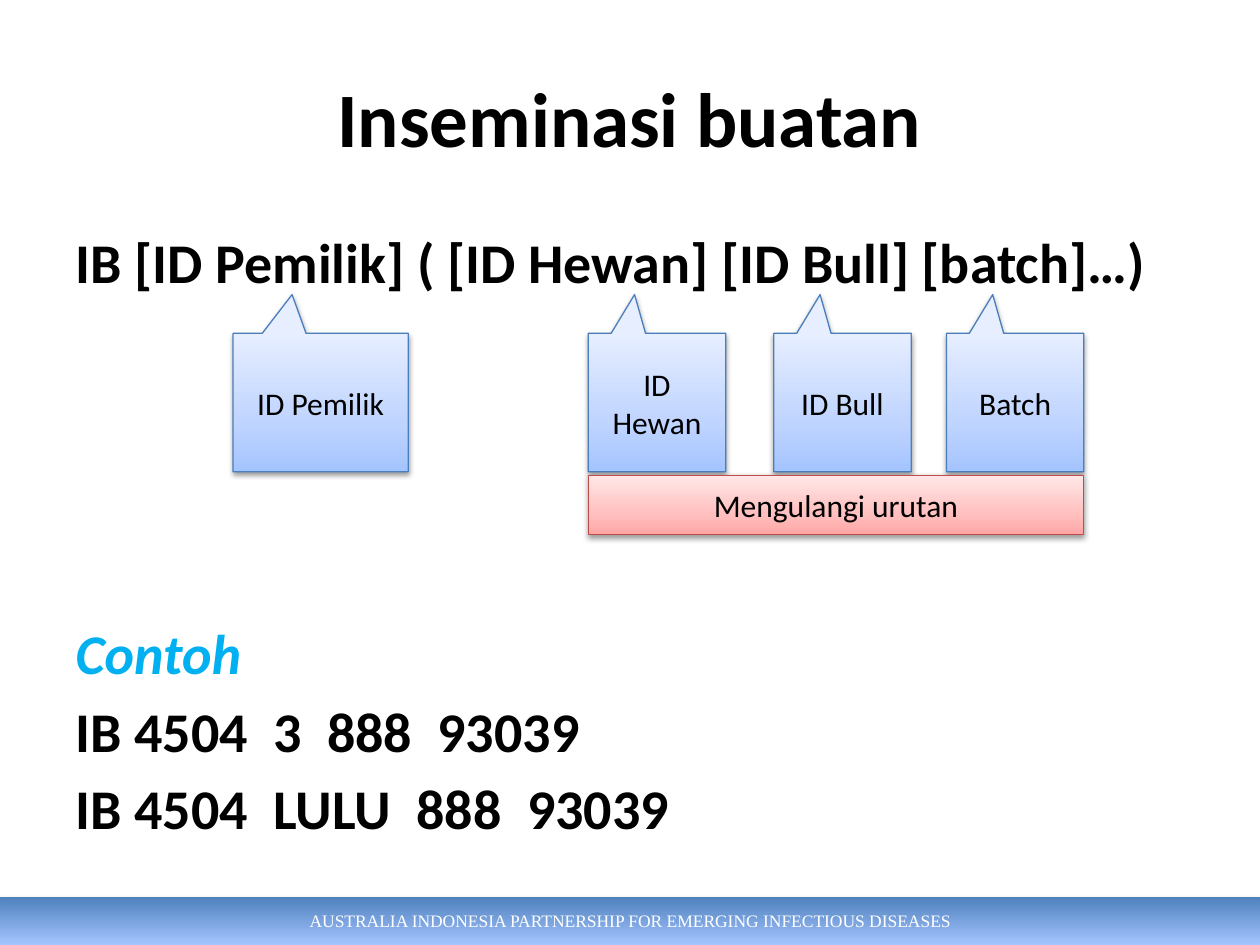
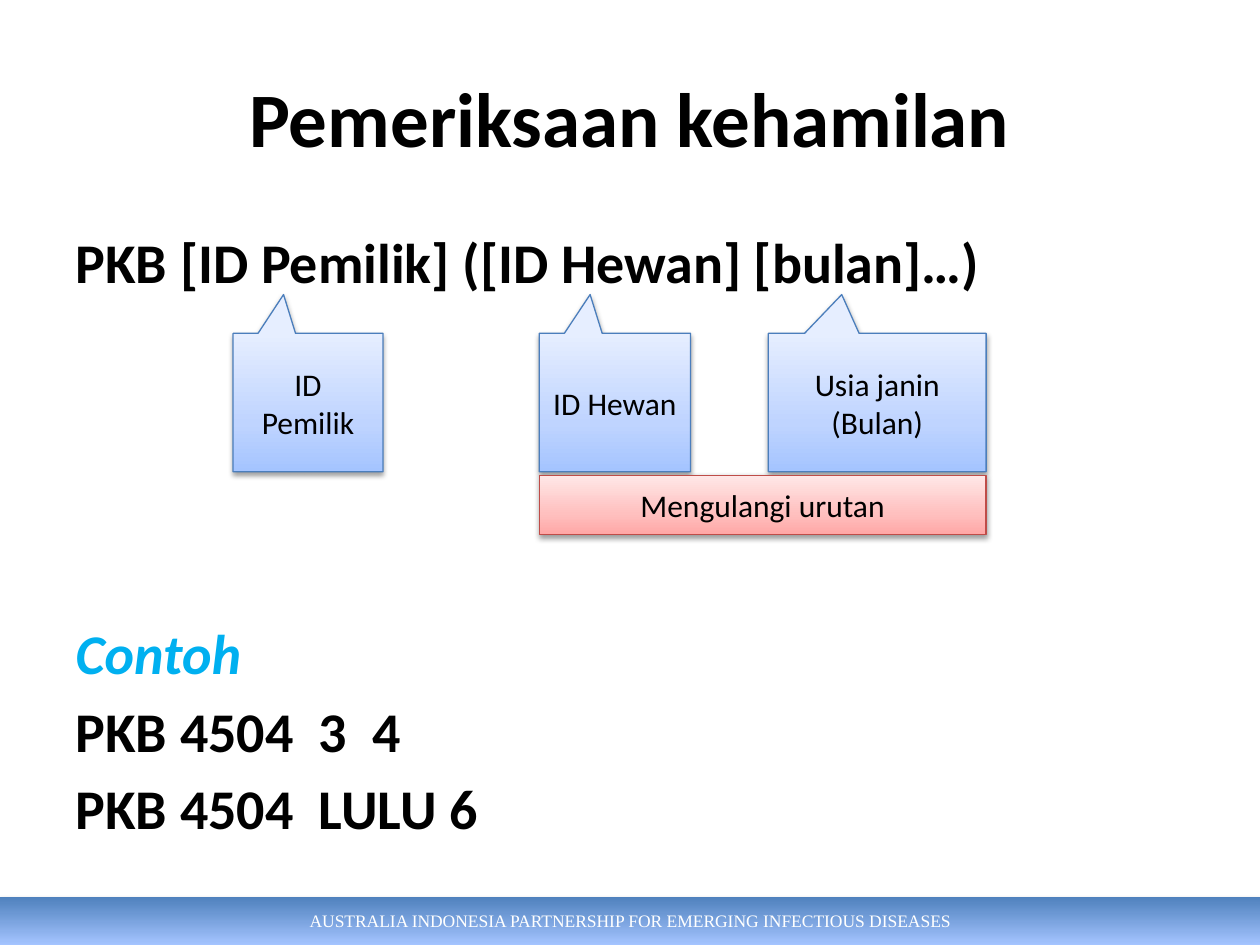
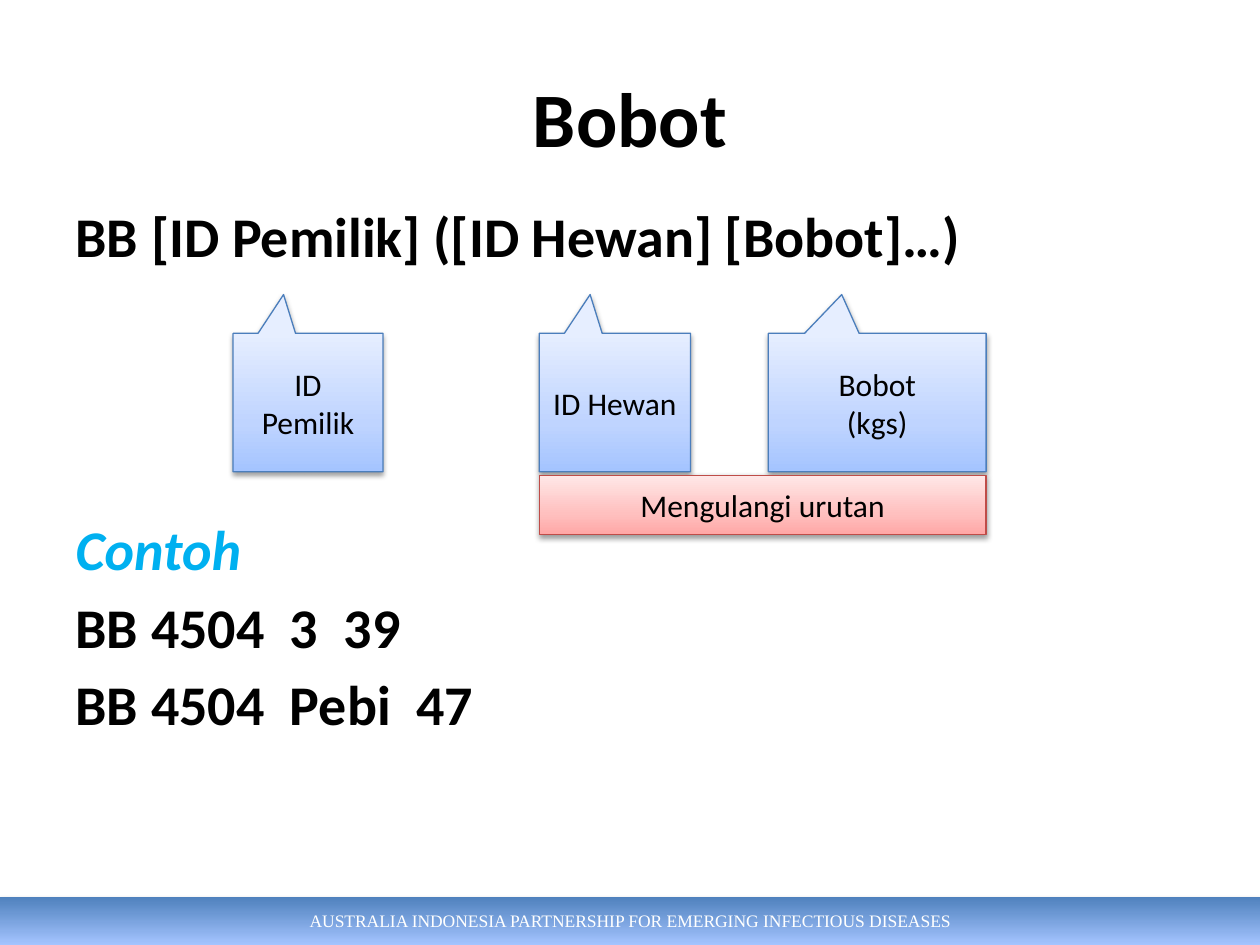
import pptx
import pptx.dml.color
import pptx.enum.shapes
import pptx.enum.text
import pptx.oxml.ns
import pptx.oxml.xmlchemy
import pptx.util
from lxml import etree

Cm = pptx.util.Cm
Pt = pptx.util.Pt
RGBColor = pptx.dml.color.RGBColor
Shape = pptx.enum.shapes.MSO_SHAPE
Anchor = pptx.enum.text.MSO_ANCHOR
Align = pptx.enum.text.PP_ALIGN
qn = pptx.oxml.ns.qn

# Shared colours
BLACK = RGBColor(0x00, 0x00, 0x00)
WHITE = RGBColor(0xFF, 0xFF, 0xFF)
CYAN = RGBColor(0x00, 0xB0, 0xF0)
BLUE_LINE = RGBColor(0x4B, 0x7E, 0xBC)
RED_LINE = RGBColor(0xBF, 0x4C, 0x48)

# Gradients from top to bottom: position in percent, colour
BLUE_FILL = [(0, RGBColor(0xE6, 0xEE, 0xFF)), (65, RGBColor(0xBF, 0xD4, 0xFF)),
             (100, RGBColor(0xA4, 0xC4, 0xFF))]
RED_FILL = [(0, RGBColor(0xFF, 0xE7, 0xE7)), (65, RGBColor(0xFF, 0xC0, 0xBF)),
            (100, RGBColor(0xFF, 0xA6, 0xA5))]
FOOTER_FILL = [(0, RGBColor(0x4F, 0x81, 0xBD)), (100, RGBColor(0xA4, 0xC4, 0xFF))]

# Shared measures, in centimetres
SLIDE_WIDTH, SLIDE_HEIGHT = 25.4, 19.05
MARGIN = 1.27
BODY_BOTTOM = 17.02
CALLOUT_TOP, CALLOUT_HEIGHT = 6.72, 2.79
BAND_TOP, BAND_HEIGHT = 9.58, 1.2
FOOTER_HEIGHT = 0.97
FOOTER = "AUSTRALIA INDONESIA PARTNERSHIP FOR EMERGING INFECTIOUS DISEASES"

# Each callout: left, width, lines; all but the first belong to the repeated part
OWNER_AND_ANIMAL = [(4.7, 3.02, ["ID Pemilik"]), (10.87, 3.05, ["ID Hewan"])]
COMMANDS = [
    dict(title="Inseminasi buatan", body_top=4.45, gap=185.5,
         syntax="IB [ID Pemilik] ( [ID Hewan] [ID Bull] [batch]…)",
         examples=["IB 4504  3  888  93039", "IB 4504  LULU  888  93039"],
         callouts=[(4.7, 3.53, ["ID Pemilik"]), (11.86, 2.77, ["ID Hewan"]),
                   (15.6, 2.77, ["ID Bull"]), (19.08, 2.77, ["Batch"])]),
    dict(title="Pemeriksaan kehamilan", body_top=4.45, gap=185.5,
         syntax="PKB [ID Pemilik] ([ID Hewan] [bulan]…)",
         examples=["PKB 4504  3  4", "PKB 4504  LULU 6"],
         callouts=OWNER_AND_ANIMAL + [(15.49, 4.39, ["Usia janin", "(Bulan)"])]),
    dict(title="Bobot", body_top=3.94, gap=140.5,
         syntax="BB [ID Pemilik] ([ID Hewan] [Bobot]…)",
         examples=["BB 4504  3  39", "BB 4504  Pebi  47"],
         callouts=OWNER_AND_ANIMAL + [(15.49, 4.39, ["Bobot", "(kgs)"])]),
]


def place(shape, left, top, width, height):
    shape.left, shape.top = Cm(left), Cm(top)
    shape.width, shape.height = Cm(width), Cm(height)


def add_span(para, text, size, color=BLACK, font="Calibri", bold=False, italic=False):
    span = para.add_run()
    span.text = text
    span.font.name = font
    span.font.size = Pt(size)
    span.font.color.rgb = color
    span.font.bold = bold
    span.font.italic = italic


def next_para(frame, index):
    return frame.add_paragraph() if index else frame.paragraphs[0]


def set_gradient(shape, stops):
    shape.fill.gradient()
    shape.fill.gradient_angle = 270
    stop_list = shape._element.spPr.find(".//" + qn("a:gsLst"))
    for stop in list(stop_list):
        stop_list.remove(stop)
    for position, color in stops:
        stop = etree.SubElement(stop_list, qn("a:gs"), pos=str(position * 1000))
        etree.SubElement(stop, qn("a:srgbClr"), val=str(color))


def set_shadow(shape, distance, opacity):
    shape.shadow.inherit = False
    effects = shape._element.spPr.find(qn("a:effectLst"))
    shadow = etree.SubElement(effects, qn("a:outerShdw"), blurRad=str(Pt(3.1)),
                              dist=str(Pt(distance)), dir="5400000", rotWithShape="0")
    color = etree.SubElement(shadow, qn("a:srgbClr"), val=str(BLACK))
    etree.SubElement(color, qn("a:alpha"), val=str(opacity * 1000))


def add_panel(page, kind, bounds, stops, line_color, lines):
    """Add a gradient shape with centred text."""
    panel = page.shapes.add_shape(kind, *[Cm(length) for length in bounds])
    set_gradient(panel, stops)
    panel.line.color.rgb = line_color
    panel.line.width = Pt(0.75)
    set_shadow(panel, 1.6, 38)
    frame = panel.text_frame
    frame.word_wrap = True
    frame.vertical_anchor = Anchor.MIDDLE
    for index, line in enumerate(lines):
        para = next_para(frame, index)
        para.alignment = Align.CENTER
        add_span(para, line, 18)
    return panel


def add_callout(page, left, width, lines):
    bounds = (left, CALLOUT_TOP, width, CALLOUT_HEIGHT)
    callout = add_panel(page, Shape.RECTANGULAR_CALLOUT, bounds, BLUE_FILL, BLUE_LINE, lines)
    callout.adjustments[0] = -0.163
    callout.adjustments[1] = -0.78


def add_repeat_band(page, repeated):
    left = repeated[0][0]
    right = repeated[-1][0] + repeated[-1][1]
    add_panel(page, Shape.RECTANGLE, (left, BAND_TOP, right - left, BAND_HEIGHT),
              RED_FILL, RED_LINE, ["Mengulangi urutan"])


def fill_title(page, text):
    title = page.shapes.title
    place(title, MARGIN, 0.76, SLIDE_WIDTH - 2 * MARGIN, 3.18)
    frame = title.text_frame
    frame.vertical_anchor = Anchor.MIDDLE
    frame.paragraphs[0].alignment = Align.CENTER
    add_span(frame.paragraphs[0], text, 44, bold=True)


def fill_body(page, command):
    body = page.placeholders[1]
    top = command["body_top"]
    place(body, MARGIN, top, SLIDE_WIDTH - 2 * MARGIN, BODY_BOTTOM - top)
    frame = body.text_frame
    frame.auto_size = pptx.enum.text.MSO_AUTO_SIZE.NONE
    for index, text in enumerate([command["syntax"], "Contoh"] + command["examples"]):
        para = next_para(frame, index)
        properties = para._p.get_or_add_pPr()
        properties.set("marL", "0")
        properties.set("indent", "0")
        etree.SubElement(properties, qn("a:buNone"))
        heading = index == 1
        # The gap above the heading leaves room for the callouts
        para.space_before = Pt(0 if index == 0 else command["gap"] if heading else 5.8)
        add_span(para, text, 32, CYAN if heading else BLACK, bold=True, italic=heading)


def add_master_footer(deck, page):
    """Draw the footer bar and move it to the master, behind everything else."""
    bar = page.shapes.add_shape(Shape.RECTANGLE, 0, Cm(SLIDE_HEIGHT - FOOTER_HEIGHT),
                                Cm(SLIDE_WIDTH), Cm(FOOTER_HEIGHT))
    set_gradient(bar, FOOTER_FILL)
    bar.line.fill.background()
    set_shadow(bar, 1.8, 35)
    bar.text_frame.vertical_anchor = Anchor.MIDDLE
    para = bar.text_frame.paragraphs[0]
    para.alignment = Align.CENTER
    add_span(para, FOOTER, 10, WHITE, "Times New Roman")
    deck.slide_master.shapes._spTree.insert(2, bar._element)


def add_command_page(deck, command):
    page = deck.slides.add_slide(deck.slide_layouts[1])
    fill_title(page, command["title"])
    fill_body(page, command)
    for callout in command["callouts"]:
        add_callout(page, *callout)
    add_repeat_band(page, command["callouts"][1:])
    return page


def main():
    deck = pptx.Presentation()
    deck.slide_width, deck.slide_height = Cm(SLIDE_WIDTH), Cm(SLIDE_HEIGHT)
    pages = [add_command_page(deck, command) for command in COMMANDS]
    add_master_footer(deck, pages[0])
    deck.save("out.pptx")


if __name__ == "__main__":
    main()
